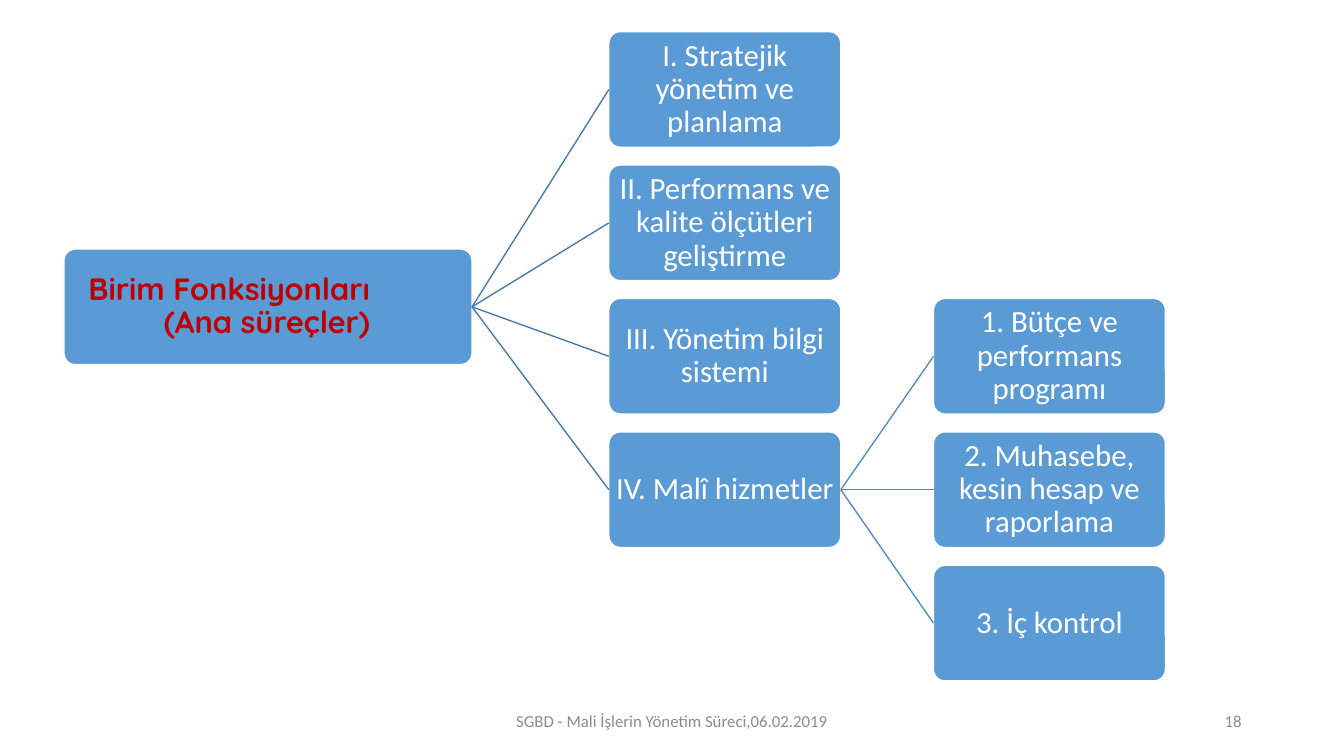
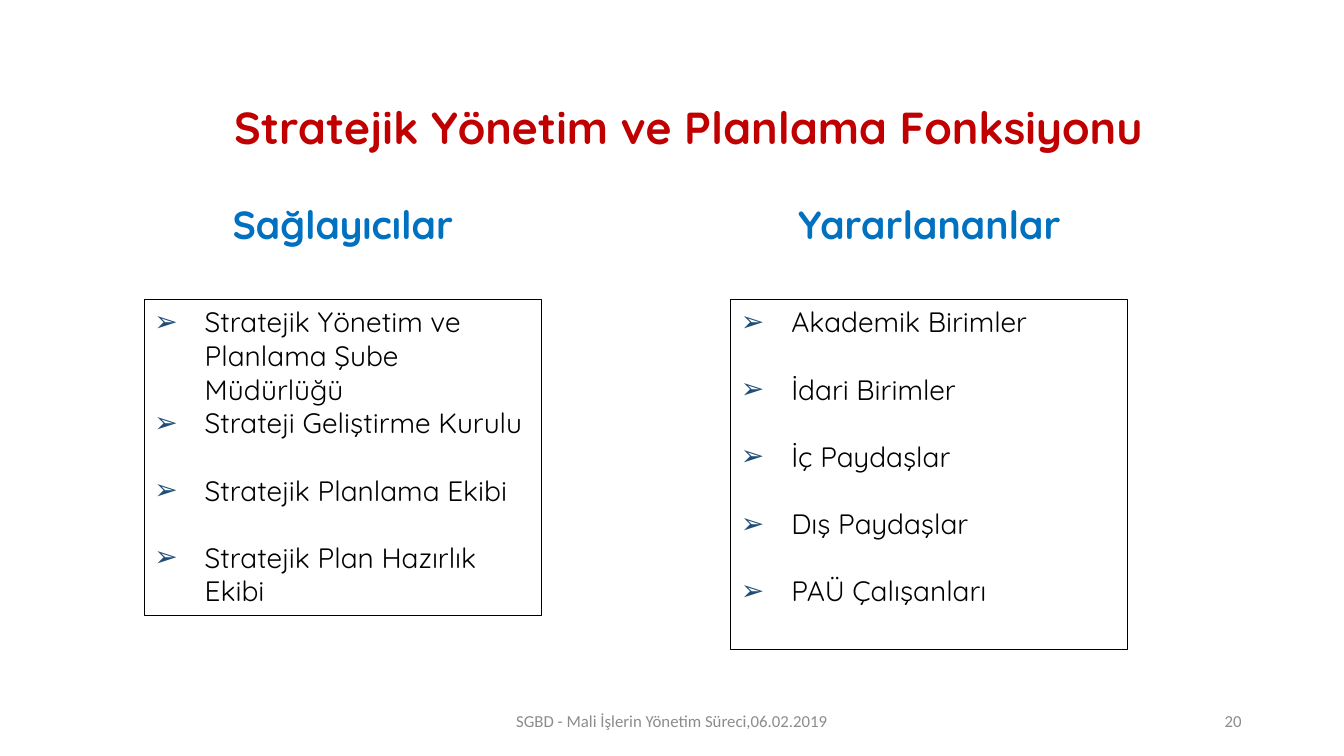
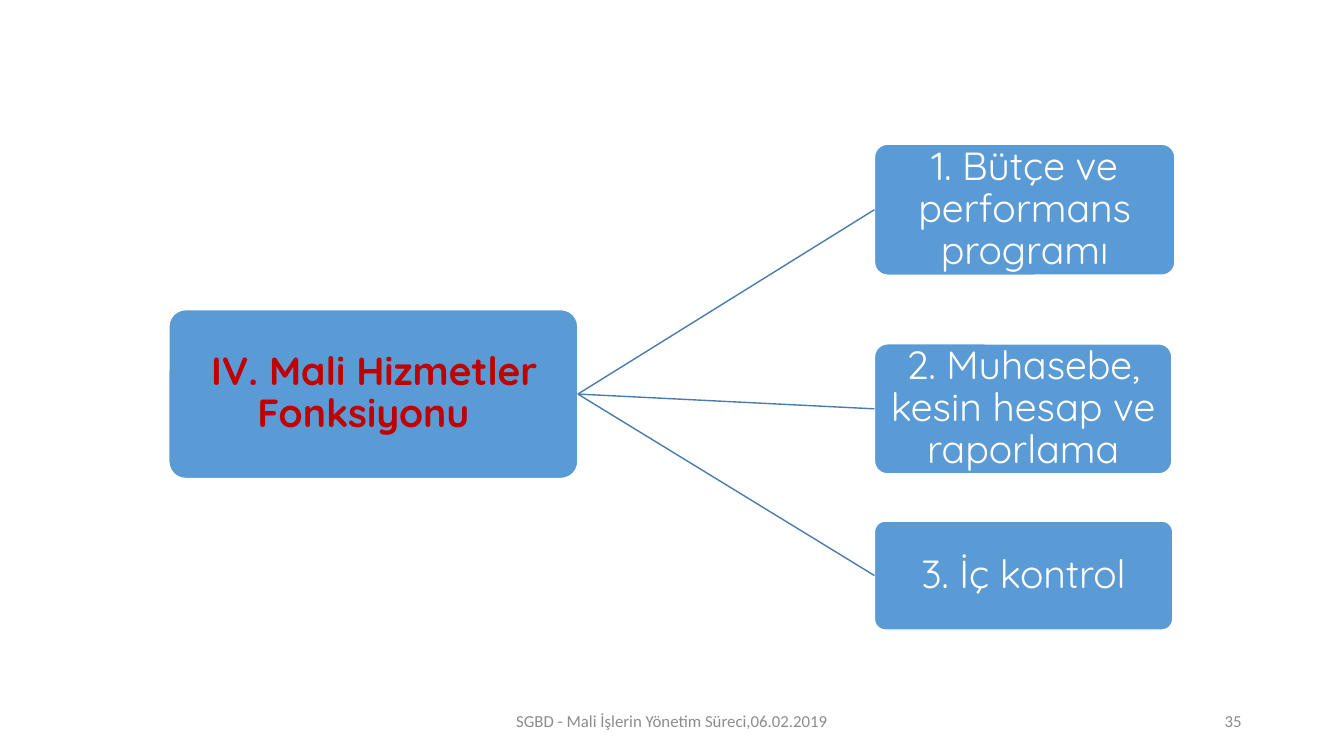
import pptx
import pptx.util
import pptx.dml.color
import pptx.enum.shapes
import pptx.enum.text
import pptx.oxml
import pptx.oxml.ns

Pt = pptx.util.Pt
ALIGN = pptx.enum.text.PP_ALIGN
ANCHOR = pptx.enum.text.MSO_ANCHOR
KIND = pptx.enum.shapes.MSO_SHAPE
qn = pptx.oxml.ns.qn

# Shared style
HUES = {
    "box": "5B9BD5", "white": "FFFFFF", "red": "C00000", "blue": "0070C0",
    "black": "000000", "bullet": "1F4E79", "gray": "8C8C8C",
    "line": "497CAB", "sub": "538DC1",
}
SANS, ROUND = "Calibri", "Quicksand"
FOOT = "SGBD - Mali İşlerin Yönetim Süreci,06.02.2019"
FOOT_AT = (318, 500.4, 324, 28.8)
PAGE_AT = (678, 500.4, 216, 28.8)

# Content: function tree
UNIT = "Birim Fonksiyonları (Ana süreçler)"
MAIN = [
    "I. Stratejik yönetim ve planlama",
    "II. Performans ve kalite ölçütleri geliştirme",
    "III. Yönetim bilgi sistemi",
    "IV. Malî hizmetler",
]
FINANCE = [
    "1. Bütçe ve performans programı",
    "2. Muhasebe, kesin hesap ve raporlama",
    "3. İç kontrol",
]

# Content: providers and users, each item with the space after it
TITLE = "Stratejik Yönetim ve Planlama Fonksiyonu"
GAP = 24
LISTS = [
    ("Sağlayıcılar", 103, 225.4, [
        ("Stratejik Yönetim ve Planlama Şube Müdürlüğü", 0),
        ("Strateji Geliştirme Kurulu", GAP),
        ("Stratejik Planlama Ekibi", GAP),
        ("Stratejik Plan Hazırlık Ekibi", 0),
    ]),
    ("Yararlananlar", 522, 249.8, [
        ("Akademik Birimler", GAP),
        ("İdari Birimler", GAP),
        ("İç Paydaşlar", GAP),
        ("Dış Paydaşlar", GAP),
        ("PAÜ Çalışanları", 0),
    ]),
]

# Content: financial services, with (top, width, height) of each leaf
SERVICE = "IV. Mali Hizmetler Fonksiyonu"
LEAVES = [(103, 214.6, 93.6), (245.6, 212.4, 92.9), (372.2, 213.1, 77.8)]


def rgb(name):
    return pptx.dml.color.RGBColor.from_string(HUES[name])


def place(shape, at):
    shape.left, shape.top, shape.width, shape.height = map(Pt, at)


def write(para, text, size, hue, font=ROUND, bold=False, align=ALIGN.CENTER):
    para.alignment = align
    run = para.add_run()
    run.text = text
    run.font.size = Pt(size)
    run.font.name = font
    run.font.bold = bold
    run.font.color.rgb = rgb(hue)


def frame(shape, anchor):
    body = shape.text_frame
    body.word_wrap = True
    body.auto_size = pptx.enum.text.MSO_AUTO_SIZE.NONE
    body.vertical_anchor = anchor
    return body


def indent(para, left, first):
    props = para._p.get_or_add_pPr()
    props.set("marL", str(Pt(left)))
    props.set("indent", str(Pt(first)))
    return props


def bullet(para):
    props = indent(para, 36, -36)
    color = pptx.oxml.parse_xml(
        f'<a:buClr {pptx.oxml.ns.nsdecls("a")}>'
        f'<a:srgbClr val="{HUES["bullet"]}"/></a:buClr>')
    props.append(color)
    props.append(props.makeelement(qn("a:buChar"), {"char": "➢"}))


def box(slide, at, text, size, hue="white", **style):
    shape = slide.shapes.add_shape(KIND.ROUNDED_RECTANGLE, *map(Pt, at))
    shape.adjustments[0] = 0.1
    shape.shadow.inherit = False
    shape.fill.solid()
    shape.fill.fore_color.rgb = rgb("box")
    shape.line.color.rgb = rgb("white")
    shape.line.width = Pt(1)
    body = frame(shape, ANCHOR.MIDDLE)
    body.margin_left = body.margin_right = Pt(1.2)
    body.margin_top = body.margin_bottom = Pt(1.2)
    body.paragraphs[0].line_spacing = 0.9
    write(body.paragraphs[0], text, size, hue, **style)
    return shape


def link(slide, root, leaves, hue):
    for leaf in leaves:
        line = slide.shapes.add_connector(
            pptx.enum.shapes.MSO_CONNECTOR.STRAIGHT, 0, 0, 0, 0)
        line.begin_connect(root, 3)
        line.end_connect(leaf, 1)
        line.line.color.rgb = rgb(hue)
        line.line.width = Pt(1)
        props = line._element.spPr
        props.append(props.makeelement(qn("a:effectLst"), {}))


def start(deck, layout, page):
    slide = deck.slides.add_slide(deck.slide_layouts.get_by_name(layout))
    for at, text, align in ((FOOT_AT, FOOT, ALIGN.CENTER),
                            (PAGE_AT, page, ALIGN.RIGHT)):
        note = slide.shapes.add_textbox(*map(Pt, at))
        body = frame(note, ANCHOR.MIDDLE)
        write(body.paragraphs[0], text, 12, "gray", SANS, align=align)
    return slide


def tree(deck):
    slide = start(deck, "Blank", "18")
    wide, high, top, step = 165.7, 82.6, 22.6, 95.3

    def column(left, row, texts):
        return [box(slide, (left, top + (row + i) * step, wide, high),
                    text, 22, font=SANS) for i, text in enumerate(texts)]

    root = box(slide, (45.6, 177.9, 291.6, high), UNIT, 22, "red",
               bold=True, align=ALIGN.RIGHT)
    root.text_frame.margin_right = Pt(70.5)
    main = column(434.9, 0, MAIN)
    link(slide, root, main, "line")
    link(slide, main[-1], column(666.8, 2, FINANCE), "sub")


def lists(deck):
    slide = start(deck, "Comparison", "20")
    title = slide.shapes.title
    place(title, (78, 41, 828, 104.4))
    para = frame(title, ANCHOR.MIDDLE).paragraphs[0]
    para.line_spacing = 0.9
    write(para, TITLE, 32, "red", bold=True)

    for i, (name, left, high, items) in enumerate(LISTS):
        head, area = (slide.placeholders[2 * i + k] for k in (1, 2))
        place(head, (left, 139.7, 283.7, 41))
        para = frame(head, ANCHOR.TOP).paragraphs[0]
        para.space_before = Pt(0)
        write(para, name, 28, "blue", bold=True)

        place(area, (left, 214.2, 283.7, high))
        area.line.color.rgb = rgb("black")
        area.line.width = Pt(0.75)
        body = frame(area, ANCHOR.TOP)
        for k, (text, gap) in enumerate(items):
            para = body.add_paragraph() if k else body.paragraphs[0]
            para.space_before = Pt(0)
            para.space_after = Pt(gap)
            bullet(para)
            write(para, text, 20, "black", align=ALIGN.LEFT)


def service(deck):
    slide = start(deck, "Blank", "35")
    root = box(slide, (120.6, 221.2, 292.2, 120.6), SERVICE, 28, "red",
               bold=True, align=ALIGN.LEFT)
    indent(root.text_frame.paragraphs[0], 58.5, -33)
    leaves = [box(slide, (624.6, top, wide, high), text, 28)
              for text, (top, wide, high) in zip(FINANCE, LEAVES)]
    link(slide, root, leaves, "line")


def main():
    deck = pptx.Presentation()
    deck.slide_width, deck.slide_height = Pt(960), Pt(540)
    tree(deck)
    lists(deck)
    service(deck)
    deck.save("out.pptx")


if __name__ == "__main__":
    main()
